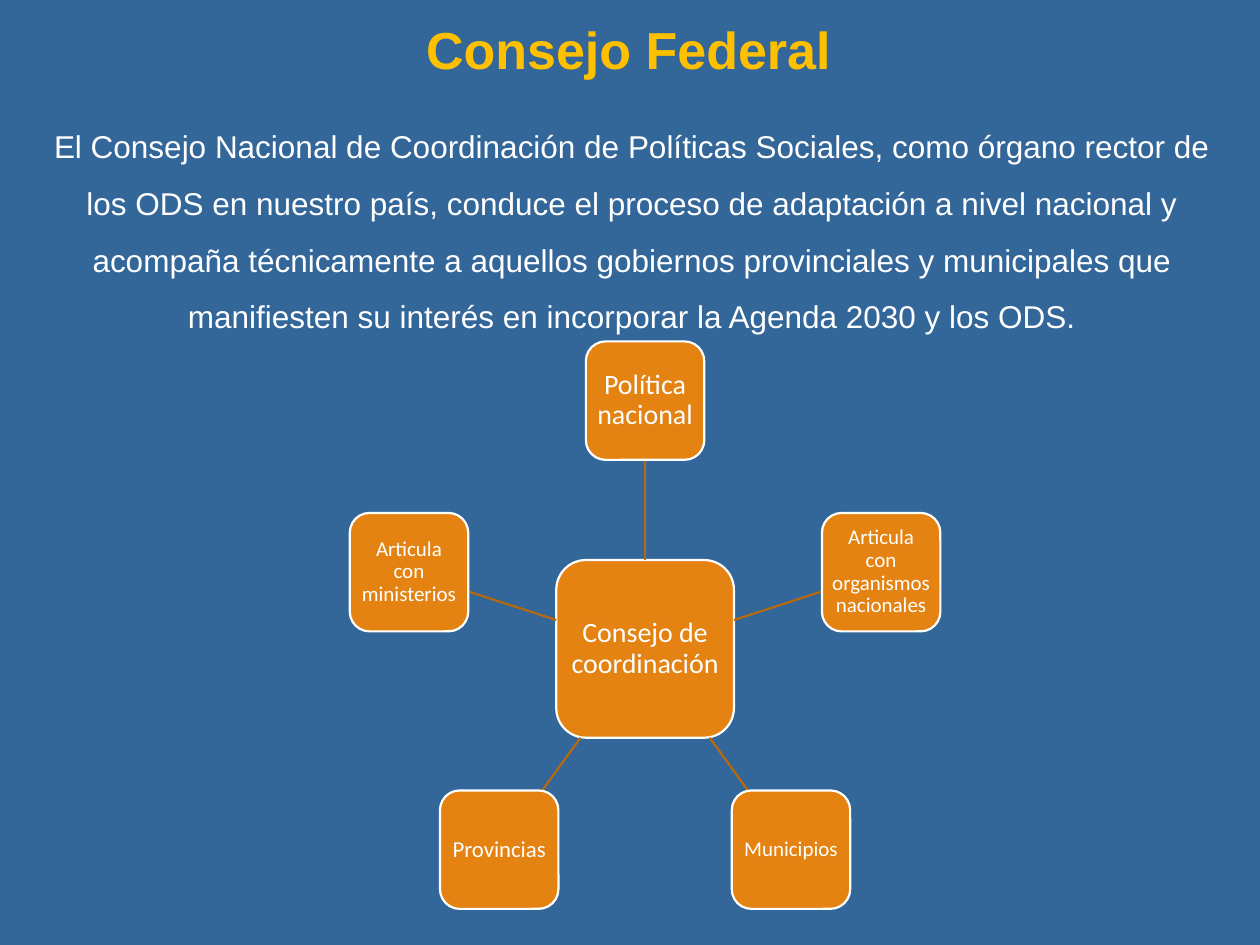
from dataclasses import dataclass
from math import cos, radians, sin

from lxml.etree import SubElement
from pptx import Presentation
from pptx.dml.color import RGBColor
from pptx.enum.shapes import MSO_CONNECTOR, MSO_SHAPE
from pptx.enum.text import MSO_ANCHOR, PP_ALIGN
from pptx.oxml.ns import qn
from pptx.util import Inches, Pt

WHITE, GOLD = "FFFFFF", "FFC000"
BLUE, ORANGE, BROWN = "336699", "E48312", "B7690E"
MID_X, MID_Y = 5.12, 5.15  # centre of the ring
RADIUS = 1.97
CORE, SIDE = 1.41, 0.94  # box sizes


@dataclass
class Node:
    text: str
    size: int
    inset: float = 0.03


NODES = [  # clockwise from the top
    Node("Política nacional", 16, 0.04),
    Node("Articula con organismos nacionales", 12),
    Node("Municipios", 12),
    Node("Provincias", 13, 0.04),
    Node("Articula con ministerios", 12),
]


def color(code: str) -> RGBColor:
    return RGBColor.from_string(code)


def write(shape, text: str, *, size: float, font: str = "Calibri",
          ink: str = WHITE, bold: bool = False, space: float = 1.0,
          anchor=MSO_ANCHOR.MIDDLE, inset: float | None = None) -> None:
    frame = shape.text_frame
    frame.word_wrap = True
    frame.vertical_anchor = anchor
    if inset is not None:
        frame.margin_left = frame.margin_right = Inches(inset)
        frame.margin_top = frame.margin_bottom = Inches(inset)
    para = frame.paragraphs[0]
    para.alignment = PP_ALIGN.CENTER
    para.line_spacing = space
    run = para.add_run()
    run.text = text
    run.font.name = font
    run.font.size = Pt(size)
    run.font.bold = bold
    run.font.color.rgb = color(ink)


def add_box(slide, node: Node, x: float, y: float, side: float):
    """Draw a rounded square centred on x, y."""
    box = slide.shapes.add_shape(
        MSO_SHAPE.ROUNDED_RECTANGLE, Inches(x - side / 2),
        Inches(y - side / 2), Inches(side), Inches(side))
    box.shadow.inherit = False
    box.fill.solid()
    box.fill.fore_color.rgb = color(ORANGE)
    box.line.color.rgb = color(WHITE)
    box.line.width = Pt(1.25)
    write(box, node.text, size=node.size, space=0.9, inset=node.inset)
    return box


def add_link(slide, dx: float, dy: float):
    """Join the core's edge to a node's edge along a unit direction."""
    reach = max(abs(dx), abs(dy))
    near = CORE / 2 / reach
    far = RADIUS - SIDE / 2 / reach
    link = slide.shapes.add_connector(
        MSO_CONNECTOR.STRAIGHT,
        Inches(MID_X + near * dx), Inches(MID_Y + near * dy),
        Inches(MID_X + far * dx), Inches(MID_Y + far * dy))
    link.line.color.rgb = color(BROWN)
    link.line.width = Pt(1.25)
    SubElement(link._element.spPr, qn("a:effectLst"))
    return link


def main() -> None:
    deck = Presentation()
    deck.slide_width, deck.slide_height = Inches(10), Inches(7.5)
    slide = deck.slides.add_slide(deck.slide_layouts[6])
    slide.background.fill.solid()
    slide.background.fill.fore_color.rgb = color(BLUE)

    # Title and intro
    title = slide.shapes.add_textbox(
        Inches(0.94), Inches(0.06), Inches(8.1), Inches(0.65))
    write(title, "Consejo Federal", size=29.7, font="Arial", ink=GOLD,
          bold=True)
    intro = slide.shapes.add_textbox(
        Inches(0.2), Inches(0.81), Inches(9.63), Inches(1.81))
    write(intro, "El Consejo Nacional de Coordinación de Políticas Sociales, "
          "como órgano rector de los ODS en nuestro país, conduce el proceso "
          "de adaptación a nivel nacional y acompaña técnicamente a aquellos "
          "gobiernos provinciales y municipales que manifiesten su interés "
          "en incorporar la Agenda 2030 y los ODS.",
          size=18, font="Arial", space=1.5, anchor=MSO_ANCHOR.TOP)

    # Core and its ring of nodes
    core = add_box(slide, Node("Consejo de coordinación", 16, 0.04),
                   MID_X, MID_Y, CORE)
    for i, node in enumerate(NODES):
        turn = radians(i * 360 / len(NODES))
        dx, dy = sin(turn), -cos(turn)
        link = add_link(slide, dx, dy)
        box = add_box(slide, node, MID_X + RADIUS * dx,
                      MID_Y + RADIUS * dy, SIDE)
        if i == 0:  # only the top link meets the middle of both sides
            link.begin_connect(core, 0)
            link.end_connect(box, 2)

    deck.save("out.pptx")


if __name__ == "__main__":
    main()
